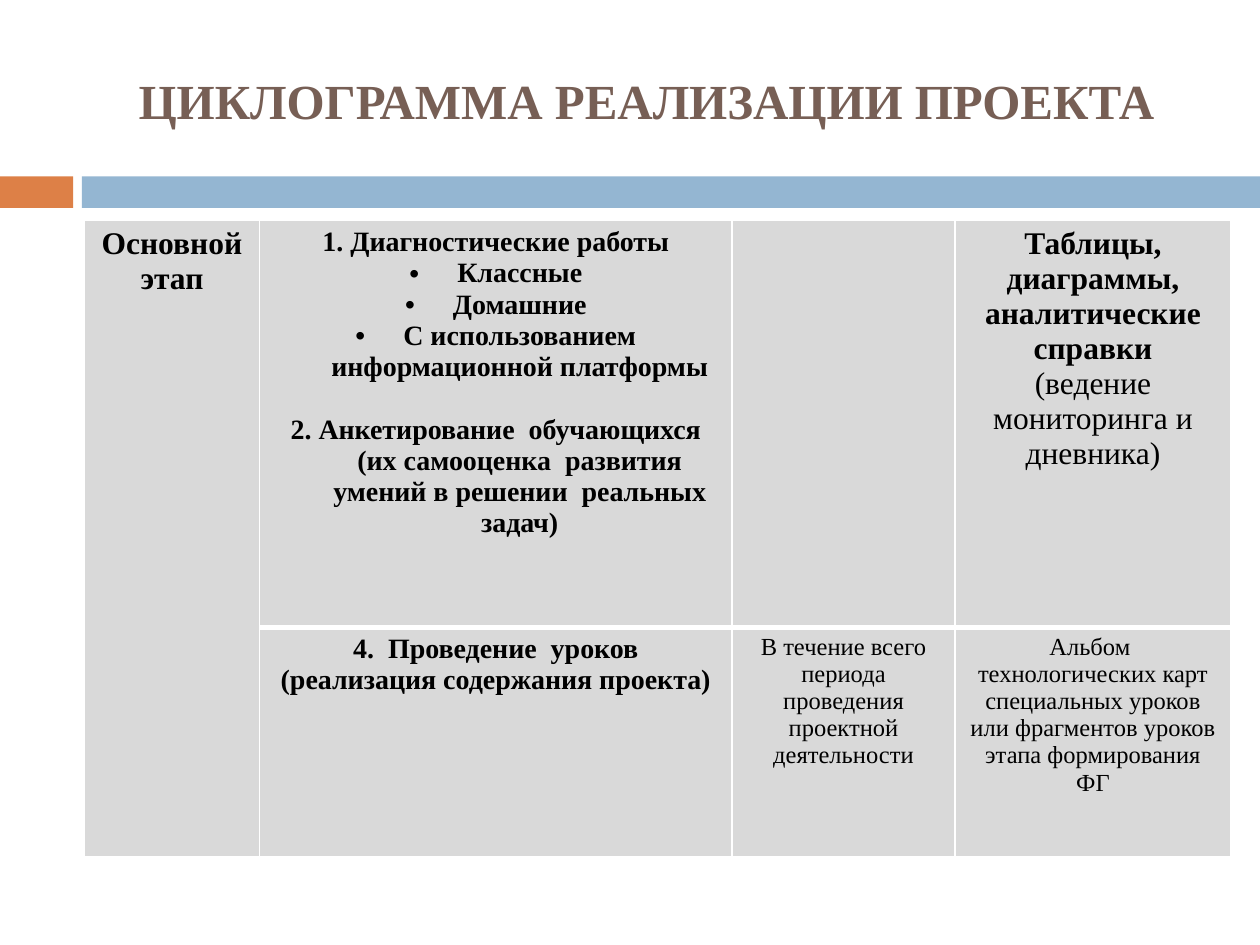
"""Build the project cyclogram slide with its stage table."""
import pptx
import pptx.dml.color
import pptx.enum.shapes
import pptx.enum.text
import pptx.oxml.ns
import pptx.util
from lxml import etree

COLORS = {"orange": "DD8047", "blue": "94B6D2", "title": "775F55",
          "cell": "D9D9D9", "border": "FFFFFF", "text": "000000"}
FONT = "Times New Roman"
WIDTH, HEIGHT = 10, 7.5
TITLE = "ЦИКЛОГРАММА РЕАЛИЗАЦИИ ПРОЕКТА"
TITLE_AREA = (0.67, 0.25, 8.92, 1.08)
BAND_TOP, BAND_HEIGHT = 1.4, 0.25
BANDS = [("orange", 0, 0.58), ("blue", 0.65, WIDTH - 0.65)]
TABLE_LEFT, TABLE_TOP = 0.67, 1.75
COLUMNS = [1.39, 3.75, 1.77, 2.19]
ROWS = [3.23, 1.82]
HANGING = 0.38
BLANK_LINE = 18.4

STAGE = [("Основной этап", 18, True, None)]
DIAGNOSTICS = [
    ("1. Диагностические работы", 16, True, "plain"),
    ("Классные", 16, True, "bullet"),
    ("Домашние", 16, True, "bullet"),
    ("С использованием информационной платформы", 16, True, "bullet"),
    ("2. Анкетирование  обучающихся (их самооценка  развития умений в решении  реальных задач)",
     16, True, "spaced"),
]
REPORTS = [("Таблицы, диаграммы, аналитические справки", 18, True, None),
           ("(ведение мониторинга и дневника)", 18, False, None)]
LESSONS = [("4.  Проведение  уроков (реализация содержания проекта)", 16, True, None)]
PERIOD = [("В течение всего периода проведения проектной деятельности", 14, False, None)]
ALBUM = [("Альбом  технологических карт специальных уроков или фрагментов уроков этапа формирования ФГ",
          14, False, None)]
CELLS = [[STAGE, DIAGNOSTICS, [], REPORTS], [[], LESSONS, PERIOD, ALBUM]]


def color(name):
    return pptx.dml.color.RGBColor.from_string(COLORS[name])


def inches(*lengths):
    return [pptx.util.Inches(length) for length in lengths]


def write(frame, lines, color_name):
    for index, (text, size, bold, style) in enumerate(lines):
        para = frame.add_paragraph() if index else frame.paragraphs[0]
        para.text = text
        para.alignment = pptx.enum.text.PP_ALIGN.CENTER
        para.font.name, para.font.size, para.font.bold = FONT, pptx.util.Pt(size), bold
        para.font.color.rgb = color(color_name)
        if style:
            indent_line(para, style)


def indent_line(para, style):
    if style == "spaced":
        para.space_before = pptx.util.Pt(BLANK_LINE)
    properties = para._p.get_or_add_pPr()
    indent = pptx.util.Inches(HANGING)
    properties.set("marL", str(indent))
    properties.set("indent", str(-indent))
    if style == "bullet":
        bullet_font = etree.Element(pptx.oxml.ns.qn("a:buFont"), typeface="Arial")
        bullet = etree.Element(pptx.oxml.ns.qn("a:buChar"), char="•")
        properties.insert_element_before(bullet_font, "a:tabLst", "a:defRPr", "a:extLst")
        properties.insert_element_before(bullet, "a:tabLst", "a:defRPr", "a:extLst")


def set_borders(cell, widths):
    properties = cell._tc.get_or_add_tcPr()
    for index, (side, width) in enumerate(zip("LRTB", widths)):
        line = etree.Element(pptx.oxml.ns.qn(f"a:ln{side}"), w=str(pptx.util.Pt(width)))
        fill = etree.SubElement(line, pptx.oxml.ns.qn("a:solidFill"))
        etree.SubElement(fill, pptx.oxml.ns.qn("a:srgbClr"), val=COLORS["border"])
        properties.insert(index, line)


def add_bands(page):
    for name, left, width in BANDS:
        band = page.shapes.add_shape(pptx.enum.shapes.MSO_SHAPE.RECTANGLE,
                                     *inches(left, BAND_TOP, width, BAND_HEIGHT))
        band.shadow.inherit = False
        band.fill.solid()
        band.fill.fore_color.rgb = color(name)
        band.line.fill.background()


def add_title(page):
    box = page.shapes.add_textbox(*inches(*TITLE_AREA))
    box.text_frame.word_wrap = True
    box.text_frame.vertical_anchor = pptx.enum.text.MSO_ANCHOR.MIDDLE
    write(box.text_frame, [(TITLE, 28, True, None)], "title")


def add_stages(page):
    table = page.shapes.add_table(len(ROWS), len(COLUMNS), *inches(
        TABLE_LEFT, TABLE_TOP, sum(COLUMNS), sum(ROWS))).table
    for column, width in zip(table.columns, COLUMNS):
        column.width = pptx.util.Inches(width)
    for row, height in zip(table.rows, ROWS):
        row.height = pptx.util.Inches(height)
    for row_index, row in enumerate(CELLS):
        for column_index, lines in enumerate(row):
            cell = table.cell(row_index, column_index)
            cell.fill.solid()
            cell.fill.fore_color.rgb = color("cell")
            divider = 3 if row_index == 0 and column_index else 1
            top = 3 if row_index and column_index else 1
            set_borders(cell, (1, 1, top, divider))
            write(cell.text_frame, lines, "text")
    table.cell(0, 0).merge(table.cell(len(ROWS) - 1, 0))


def main():
    deck = pptx.Presentation()
    deck.slide_width, deck.slide_height = inches(WIDTH, HEIGHT)
    page = deck.slides.add_slide(deck.slide_layouts[6])
    add_bands(page)
    add_title(page)
    add_stages(page)
    deck.save("out.pptx")


if __name__ == "__main__":
    main()
